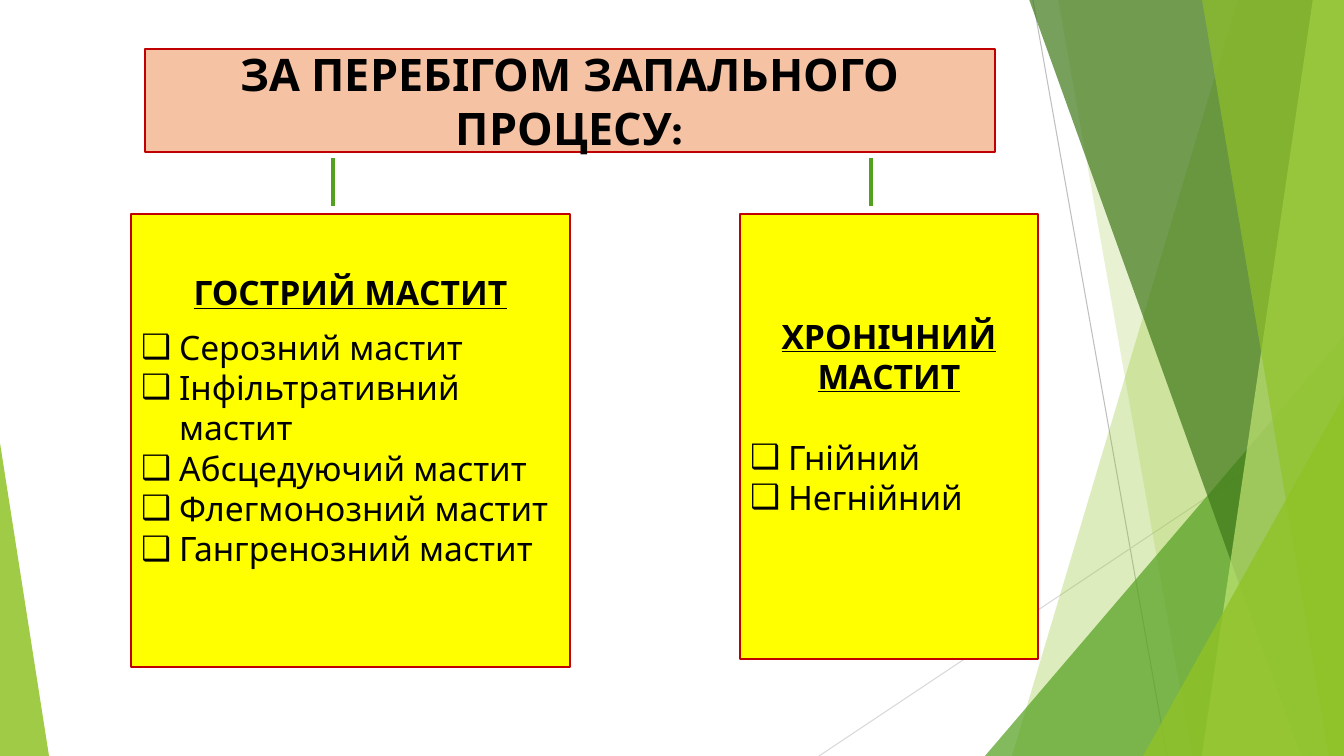
from dataclasses import dataclass

from lxml.etree import SubElement
from pptx import Presentation
from pptx.dml.color import RGBColor
from pptx.enum.shapes import MSO_CONNECTOR, MSO_SHAPE
from pptx.enum.text import MSO_ANCHOR, MSO_AUTO_SIZE, PP_ALIGN
from pptx.oxml.ns import qn
from pptx.util import Emu, Pt

SCALE = 914400 / 100.8
WIDTH, HEIGHT = 1344, 756
FONT = "Karla"
BULLET = "❑"
HANG = 38
COLORS = {
    "black": "000000",
    "peach": "F5C2A3",
    "yellow": "FFFF00",
    "red": "C00000",
    "green": "54A021",
    "lime": "90C226",
    "pale": "C0E474",
    "dark": "3F7819",
    "gray": "BFBFBF",
    "silver": "D9D9D9",
}


@dataclass(frozen=True)
class Line:
    x1: int
    y1: int
    x2: int
    y2: int
    color: str
    weight: float


@dataclass(frozen=True)
class Band:
    top_x: int
    bottom_x: int
    color: str
    opacity: int


@dataclass(frozen=True)
class Wedge:
    left: int
    top: int
    width: int
    apex: int
    color: str
    opacity: int


@dataclass(frozen=True)
class Box:
    left: int
    top: int
    width: int
    height: int
    color: str


@dataclass(frozen=True)
class Card:
    box: Box
    heading: str
    gap: int
    items: tuple[str, ...]


BACKDROP = (
    Line(1033, 0, 1167, HEIGHT, "gray", 0.75),
    Line(WIDTH, 406, 819, HEIGHT, "silver", 0.75),
    Band(1238, 1012, "lime", 30),
    Band(1058, 1192, "lime", 20),
    Wedge(985, 336, 359, 1, "green", 72),
    Band(1029, 1301, "dark", 70),
    Band(1313, 1202, "pale", 70),
    Band(1202, 1329, "lime", 65),
    Wedge(1143, 396, 201, 1, "lime", 80),
    Wedge(0, 443, 49, 0, "lime", 85),
)
TITLE = "ЗА ПЕРЕБІГОМ ЗАПАЛЬНОГО ПРОЦЕСУ:"
TITLE_BOX = Box(145, 49, 850, 103, "peach")
CARDS = (
    Card(Box(131, 214, 439, 453, "yellow"), "ГОСТРИЙ МАСТИТ", 10,
         ("Серозний мастит", "Інфільтративний мастит", "Абсцедуючий мастит",
          "Флегмонозний мастит", "Гангренозний мастит")),
    Card(Box(740, 214, 298, 445, "yellow"), "ХРОНІЧНИЙ МАСТИТ", 29,
         ("Гнійний", "Негнійний")),
)
STEMS = tuple(Line(x, 158, x, 206, "green", 3) for x in (871, 333))


def px(value: int) -> Emu:
    return Emu(round(value * SCALE))


def rgb(name: str) -> RGBColor:
    return RGBColor.from_string(COLORS[name])


def draw_line(shapes, line: Line) -> None:
    s = shapes.add_connector(MSO_CONNECTOR.STRAIGHT, px(line.x1), px(line.y1),
                             px(line.x2), px(line.y2))
    s.line.color.rgb = rgb(line.color)
    s.line.width = Pt(line.weight)
    SubElement(s._element.spPr, qn("a:effectLst"))


def draw_facet(shapes, facet: Band | Wedge) -> None:
    if isinstance(facet, Band):
        builder = shapes.build_freeform(facet.top_x, -1, scale=SCALE)
        builder.add_line_segments(
            [(WIDTH, -1), (WIDTH, HEIGHT), (facet.bottom_x, HEIGHT)], close=True)
        s = builder.convert_to_shape()
    else:
        s = shapes.add_shape(MSO_SHAPE.ISOSCELES_TRIANGLE, px(facet.left), px(facet.top),
                             px(facet.width), px(HEIGHT - facet.top))
        s.adjustments[0] = facet.apex
    s.shadow.inherit = False
    s.line.fill.background()
    s.fill.solid()
    s.fill.fore_color.rgb = rgb(facet.color)
    color = s._element.spPr.find(qn("a:solidFill"))[0]
    SubElement(color, qn("a:alpha"), val=str(facet.opacity * 1000))


def place(shapes, s, box: Box):
    shapes._spTree.append(s._element)
    s.left, s.top, s.width, s.height = map(px, (box.left, box.top, box.width, box.height))
    s.fill.solid()
    s.fill.fore_color.rgb = rgb(box.color)
    s.line.color.rgb = rgb("red")
    s.line.width = Pt(1.5)
    tf = s.text_frame
    tf.word_wrap = True
    tf.auto_size = MSO_AUTO_SIZE.NONE
    tf.vertical_anchor = MSO_ANCHOR.MIDDLE
    return tf


def write(p, text: str, size: int, bold: bool = False, underline: bool = False) -> None:
    p.space_before = Pt(0)
    r = p.add_run()
    r.text = text
    r.font.name = FONT
    r.font.size = Pt(size)
    r.font.bold = bold
    r.font.underline = underline
    r.font.color.rgb = rgb("black")


def fill_card(tf, card: Card) -> None:
    tf.margin_bottom = px(45)
    p = tf.paragraphs[0]
    p.alignment = PP_ALIGN.CENTER
    write(p, card.heading, 24, bold=True, underline=True)
    p.space_after = Pt(card.gap)
    pPr = p._p.get_or_add_pPr()
    pPr.set("marL", "0")
    pPr.set("indent", "0")
    SubElement(pPr, qn("a:buNone"))
    for item in card.items:
        p = tf.add_paragraph()
        p.alignment = PP_ALIGN.LEFT
        write(p, item, 24)
        pPr = p._p.get_or_add_pPr()
        pPr.set("marL", str(px(HANG)))
        pPr.set("indent", str(-px(HANG)))
        SubElement(pPr, qn("a:buChar"), char=BULLET)


def main() -> None:
    prs = Presentation()
    prs.slide_width, prs.slide_height = px(WIDTH), px(HEIGHT)
    slide = prs.slides.add_slide(prs.slide_layouts.get_by_name("Two Content"))
    shapes = slide.shapes
    title, *bodies = list(slide.placeholders)[:3]

    for part in BACKDROP:
        if isinstance(part, Line):
            draw_line(shapes, part)
        else:
            draw_facet(shapes, part)

    tf = place(shapes, title, TITLE_BOX)
    p = tf.paragraphs[0]
    p.alignment = PP_ALIGN.CENTER
    write(p, TITLE, 32, bold=True)
    for body, card in zip(bodies, CARDS):
        fill_card(place(shapes, body, card.box), card)
    for stem in STEMS:
        draw_line(shapes, stem)

    prs.save("out.pptx")


if __name__ == "__main__":
    main()
